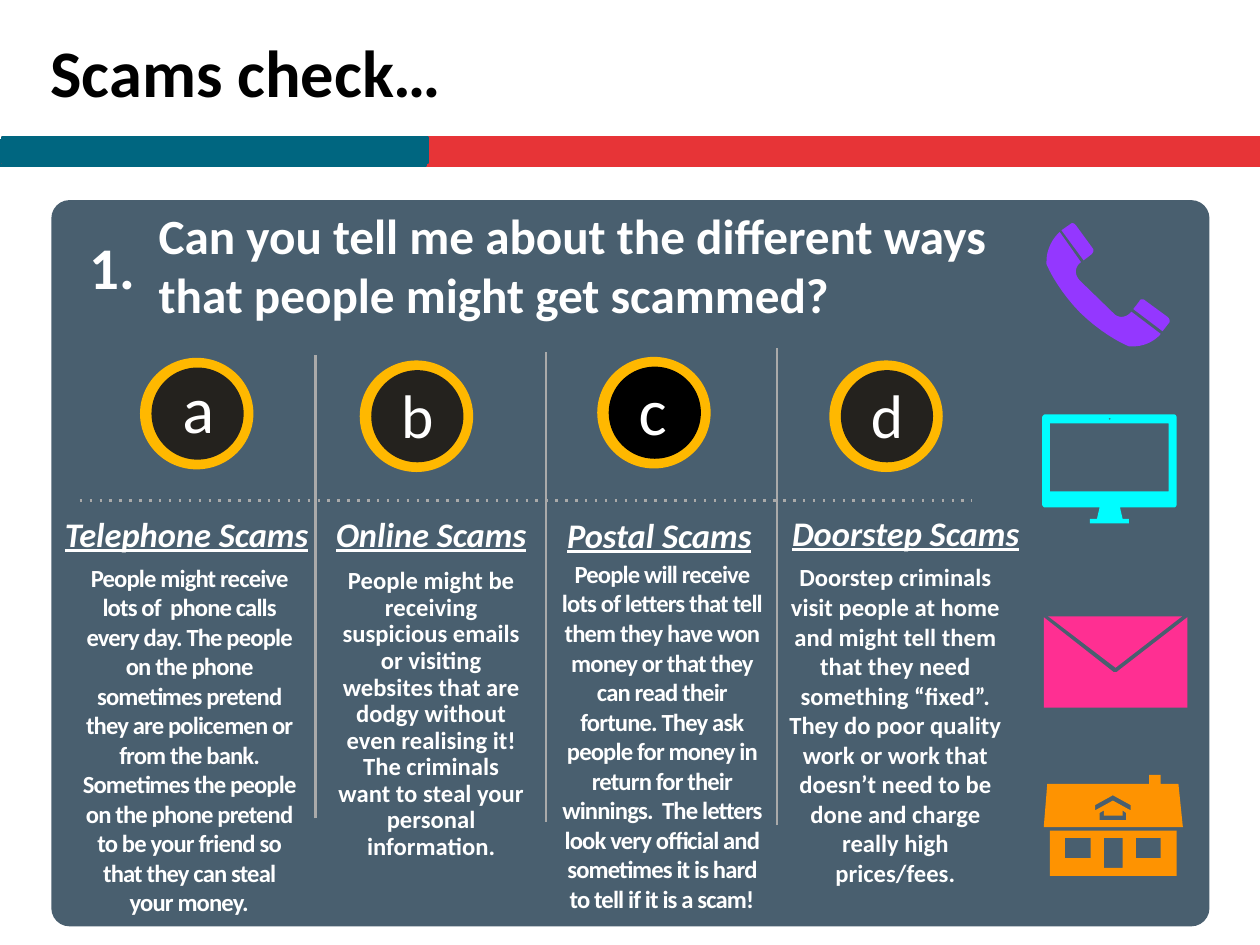
from dataclasses import dataclass, field
from typing import Any

from lxml.etree import SubElement as Sub
from pptx import Presentation
from pptx.dml.color import RGBColor
from pptx.enum.shapes import MSO_CONNECTOR as Conn, MSO_SHAPE as Kind
from pptx.enum.text import MSO_AUTO_SIZE as Fit, PP_ALIGN as Align
from pptx.oxml.ns import qn
from pptx.util import Inches, Pt

WHITE = RGBColor(0xFF, 0xFF, 0xFF)
BLACK = RGBColor(0, 0, 0)
INK = RGBColor(0x24, 0x22, 0x1E)
SLATE = RGBColor(0x49, 0x5F, 0x6F)
GREY = RGBColor(0xAA, 0xAA, 0xAA)
GOLD = RGBColor(0xFF, 0xB8, 0x00)
RED = RGBColor(0xE7, 0x34, 0x37)
TEAL = RGBColor(0x00, 0x66, 0x80)
PURPLE = RGBColor(0x94, 0x37, 0xFF)
CYAN = RGBColor(0x00, 0xFD, 0xFF)
PINK = RGBColor(0xFF, 0x2F, 0x92)
ORANGE = RGBColor(0xFE, 0x93, 0x01)

Box = tuple[float, float, float, float]
Path = list[tuple[float, ...]]
WIDE, HIGH = 14.22, 10.67
BASE = {"name": "Calibri", "bold": True}
HEAD = {"size": Pt(28), "italic": True, "underline": True}
BODY = {"size": Pt(20)}


@dataclass
class Column:
    mark: str
    disc: tuple[float, float]
    ink: RGBColor
    mark_box: Box
    mark_size: int
    head: str
    head_box: Box
    body: str
    body_box: Box
    inset: float = 0.02
    track: int = 0
    para: dict[str, Any] = field(default_factory=dict)


@dataclass
class Icon:
    color: RGBColor
    paths: list[Path]


def rect(left: float, top: float, right: float, low: float) -> Path:
    return [(left, top), (right, top), (right, low), (left, low)]


COLUMNS = [
    Column("a", (1.58, 4.04), INK, (1.96, 4.1, 0.76, 1.05), 54,
           "Telephone Scams", (0.55, 5.73, 3.11, 0.59),
           "People might receive lots of  phone calls every day. The people on the phone sometimes "
           "pretend they are policemen or from the bank. Sometimes the people on the phone pretend "
           "to be your friend so that they can steal your money.",
           (0.9, 6.33, 2.47, 4.08), track=-70),
    Column("b", (4.06, 4.07), INK, (4.43, 4.21, 1.06, 0.94), 50,
           "Online Scams", (3.69, 5.73, 2.35, 0.59),
           "People might be receiving suspicious emails or visiting websites that are dodgy without "
           "even realising it! The criminals want to steal your personal information.",
           (3.79, 6.4, 2.15, 3.37), para={"line_spacing": 0.9, "space_before": Pt(2)}),
    Column("c", (6.74, 4.03), BLACK, (7.11, 4.12, 1.02, 1.01), 54,
           "Postal Scams", (6.25, 5.74, 2.38, 0.59),
           "People will receive lots of letters that tell them they have won money or that they can "
           "read their fortune. They ask people for money in return for their winnings.  The letters "
           "look very official and sometimes it is hard to tell if it is a scam!",
           (6.28, 6.28, 2.38, 4.1), inset=0.03, track=-70),
    Column("d", (9.36, 4.07), INK, (9.73, 4.21, 1.04, 0.94), 50,
           "Doorstep Scams", (8.85, 5.72, 2.74, 0.59),
           "Doorstep criminals visit people at home and might tell them that they need something "
           "“fixed”. They do poor quality work or work that doesn’t need to be done and charge "
           "really high prices/fees.",
           (8.87, 6.33, 2.47, 3.74), para={"space_before": Pt(14)}),
]

ICONS = [
    Icon(PURPLE, [
        [(12.1, 2.52), (12.09, 2.52, 12.08, 2.53, 12.08, 2.53), (11.98, 2.6), (12.23, 2.94),
         (12.32, 2.87), (12.34, 2.85, 12.35, 2.82, 12.33, 2.8), (12.14, 2.54),
         (12.13, 2.53, 12.12, 2.52, 12.1, 2.52)],
        [(11.96, 2.62), (11.96, 2.62, 11.8, 2.75, 11.81, 2.98),
         (11.81, 2.98, 11.91, 3.24, 12.19, 3.53), (12.48, 3.81, 12.74, 3.91, 12.74, 3.91),
         (12.98, 3.93, 13.1, 3.77, 13.1, 3.77), (12.77, 3.52),
         (12.71, 3.59, 12.62, 3.6, 12.56, 3.53), (12.19, 3.17),
         (12.12, 3.1, 12.13, 3.01, 12.2, 2.96)],
        [(12.89, 3.38), (12.87, 3.38, 12.86, 3.39, 12.86, 3.4), (12.79, 3.49), (13.12, 3.74),
         (13.19, 3.65), (13.21, 3.63, 13.2, 3.6, 13.18, 3.58), (12.92, 3.39),
         (12.91, 3.38, 12.9, 3.38, 12.89, 3.38)]]),
    Icon(CYAN, [
        [(11.79, 4.68), (11.78, 4.68, 11.76, 4.7, 11.76, 4.72), (11.76, 5.69),
         (11.76, 5.71, 11.78, 5.73, 11.79, 5.73), (12.41, 5.73), (12.38, 5.86), (12.3, 5.86),
         (12.3, 5.91), (12.74, 5.91), (12.74, 5.86), (12.67, 5.86), (12.64, 5.73), (13.25, 5.73),
         (13.27, 5.73, 13.28, 5.71, 13.28, 5.69), (13.28, 4.72),
         (13.28, 4.7, 13.27, 4.68, 13.25, 4.68)],
        [(12.52, 4.72), (12.54, 4.73), (12.52, 4.74), (12.51, 4.73)],
        rect(11.85, 4.78, 13.19, 5.55)]),
    Icon(PINK, [
        [(11.83, 6.96), (12.59, 7.54), (13.34, 6.96)],
        [(11.78, 6.97), (11.78, 7.99), (13.4, 7.99), (13.4, 6.97), (12.6, 7.59), (12.57, 7.59)]]),
    Icon(ORANGE, [
        [(12.97, 8.75), (12.97, 8.85), (11.82, 8.85), (11.78, 9.34), (13.35, 9.34),
         (13.3, 8.85), (13.1, 8.85), (13.1, 8.75)],
        [(12.56, 8.98), (12.76, 9.09), (12.76, 9.15), (12.56, 9.04), (12.36, 9.15), (12.36, 9.09)],
        [(12.46, 9.15), (12.46, 9.21), (12.67, 9.21), (12.67, 9.15), (12.71, 9.18),
         (12.71, 9.26), (12.41, 9.26), (12.41, 9.18)],
        rect(11.85, 9.38, 13.28, 9.89), rect(12.02, 9.46, 12.31, 9.69),
        rect(12.46, 9.46, 12.67, 9.8), rect(12.82, 9.46, 13.1, 9.69)]),
]


def paint(shape: Any, color: RGBColor, edge: bool = False) -> None:
    shape.shadow.inherit = False
    shape.fill.solid()
    shape.fill.fore_color.rgb = color
    if edge:
        shape.line.color.rgb = color
        shape.line.width = Pt(2)
    else:
        shape.line.fill.background()


def block(shapes: Any, kind: Any, box: Box, color: RGBColor, edge: bool = False) -> Any:
    shape = shapes.add_shape(kind, *map(Inches, box))
    paint(shape, color, edge)
    return shape


def write(shapes: Any, text: str, box: Box, style: dict[str, Any], color: RGBColor = WHITE,
          inset: tuple[float, float] = (0.02, 0.02), wrap: bool = True, track: int = 0,
          para: dict[str, Any] | None = None) -> None:
    frame = shapes.add_textbox(*map(Inches, box)).text_frame
    across, down = map(Inches, inset)
    form = {"word_wrap": wrap, "auto_size": Fit.SHAPE_TO_FIT_TEXT, "margin_left": across,
            "margin_right": across, "margin_top": down, "margin_bottom": down}
    line = frame.paragraphs[0]
    run = line.add_run()
    run.text = text
    for part, values in ((frame, form), (line, para or {}), (run.font, BASE | style)):
        for key, value in values.items():
            setattr(part, key, value)
    run.font.color.rgb = color
    if track:
        run._r.get_or_add_rPr().set("spc", str(track))


def rule(shapes: Any, ends: Box, dots: bool = False) -> None:
    line = shapes.add_connector(Conn.STRAIGHT, *map(Inches, ends))
    line.line.color.rgb = GREY
    line.line.width = Pt(2)
    props = line._element.spPr
    if dots:
        Sub(props.find(qn("a:ln")), qn("a:prstDash"), val="dot")
    Sub(props, qn("a:effectLst"))


def trace(path: Path, steps: int = 10) -> list[tuple[int, int]]:
    spots = [path[0]]
    for part in path[1:]:
        if len(part) == 2:
            spots.append(part)
            continue
        knots = [spots[-1], part[:2], part[2:4], part[4:]]
        for step in range(1, steps + 1):
            t = step / steps
            rates = ((1 - t) ** 3, 3 * t * (1 - t) ** 2, 3 * t * t * (1 - t), t ** 3)
            spots.append(tuple(sum(r * k[axis] for r, k in zip(rates, knots)) for axis in (0, 1)))
    return [(Inches(x), Inches(y)) for x, y in spots]


def draw(shapes: Any, icon: Icon) -> None:
    first, *rest = map(trace, icon.paths)
    pen = shapes.build_freeform(*first[0])
    pen.add_line_segments(first[1:])
    for spots in rest:
        pen.move_to(*spots[0])
        pen.add_line_segments(spots[1:])
    paint(pen.convert_to_shape(), icon.color)


def main() -> None:
    deck = Presentation()
    deck.slide_width, deck.slide_height = Inches(WIDE), Inches(HIGH)
    shapes = deck.slides.add_slide(deck.slide_layouts[6]).shapes

    panel = block(shapes, Kind.ROUNDED_RECTANGLE, (0.58, 2.26, 13.07, 8.2), SLATE)
    panel.adjustments[0] = 0.025
    write(shapes, "Scams check…", (0.55, 0.33, 4.5, 0.95), {"size": Pt(54)}, BLACK, wrap=False)
    write(shapes, "Can you tell me about the different ways that people might get scammed?",
          (1.73, 2.26, 10.12, 1.47), {"size": Pt(40)}, inset=(0.06, 0.06))
    write(shapes, "1.", (0.99, 2.58, 0.56, 0.85), {"size": Pt(48)}, wrap=False)

    for x, top, low in ((3.56, 4.01, 9.24), (6.16, 3.97, 9.28), (8.77, 3.93, 9.32)):
        rule(shapes, (x, low, x, top))
    rule(shapes, (0.9, 5.65, 10.97, 5.65), dots=True)

    mid = {"alignment": Align.CENTER}
    for col in COLUMNS:
        left, top = col.disc
        badge = shapes.add_group_shape().shapes
        block(badge, Kind.OVAL, (left, top, 1.28, 1.26), GOLD)
        block(badge, Kind.OVAL, (left + 0.13, top + 0.11, 1.04, 1.04), col.ink)
        write(shapes, col.mark, col.mark_box, {"size": Pt(col.mark_size), "bold": False},
              inset=(0.1, 0.05), track=-210)
        write(shapes, col.head, col.head_box, HEAD, inset=(0.06, 0.06), para=mid)
        write(shapes, col.body, col.body_box, BODY, inset=(col.inset, col.inset),
              track=col.track, para=mid | col.para)

    for icon in ICONS:
        draw(shapes, icon)

    for left, top in ((0, 1.58), (0.02, 1.55)):
        for width, color in ((WIDE - left, RED), (4.81, TEAL)):
            block(shapes, Kind.RECTANGLE, (left, top, width, 0.29), color, edge=True)

    deck.save("out.pptx")


if __name__ == "__main__":
    main()
